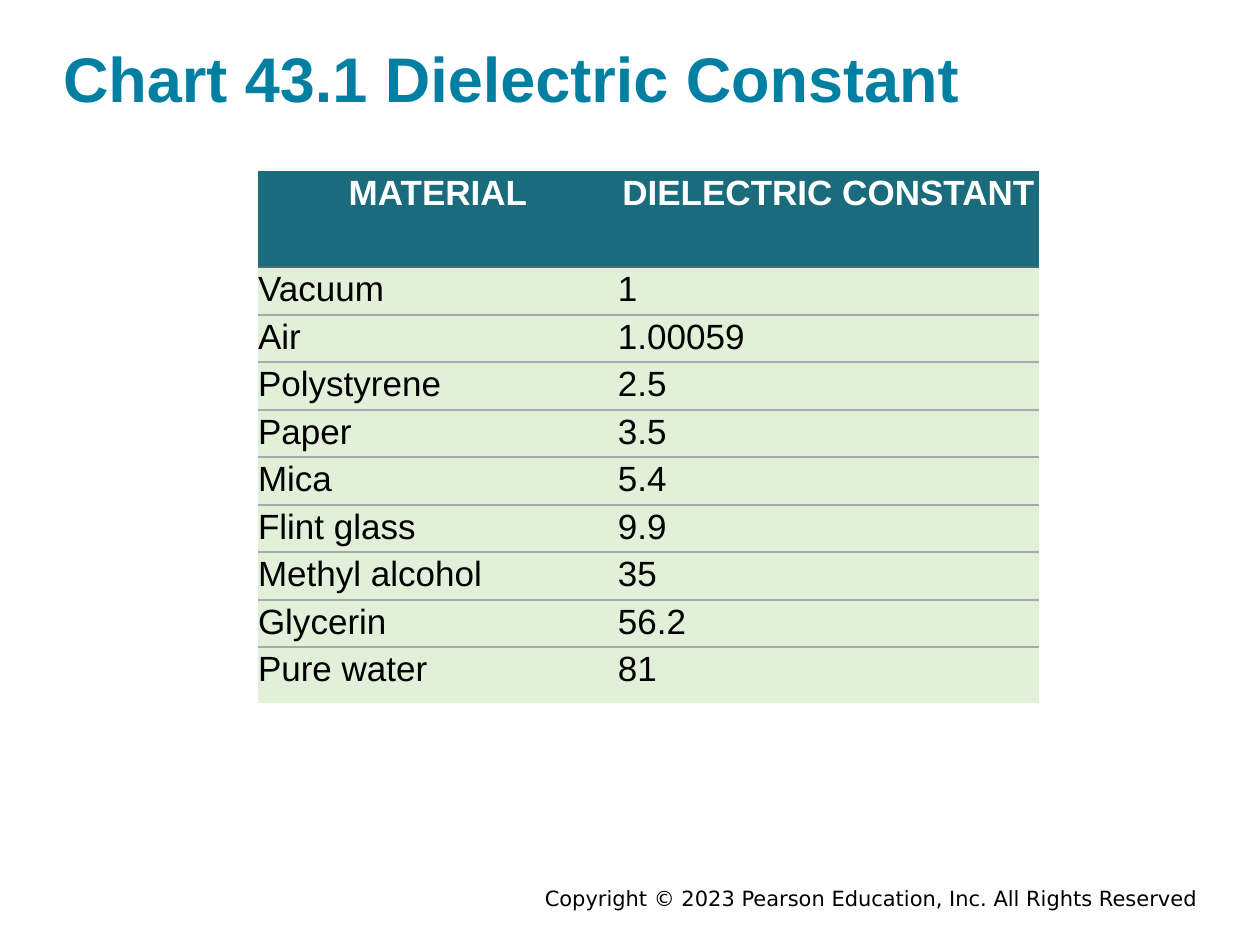
"""Build the slide with a table of dielectric constants."""
from lxml import etree
from pptx import Presentation
from pptx import util as u
from pptx.dml.color import RGBColor
from pptx.enum import text
from pptx.oxml import ns

COLORS = {"title": "007FA3", "head": "1A6C7C", "body": "E2EFD9", "white": "FFFFFF",
          "black": "000000", "head_rule": "4F6B79", "rule": "A7A9AC"}
ROWS = [("MATERIAL", "DIELECTRIC CONSTANT"), ("Vacuum", "1"), ("Air", "1.00059"),
        ("Polystyrene", "2.5"), ("Paper", "3.5"), ("Mica", "5.4"), ("Flint glass", "9.9"),
        ("Methyl alcohol", "35"), ("Glycerin", "56.2"), ("Pure water", "81")]
COLS = [360, 421]
HEIGHTS = [96] + [48, 47] * 4 + [56]
NO_GRID = "{2D5ABB26-0587-4C30-8999-92F81FD0307C}"
PX = 914400 / 126


def px(*values):
    return [u.Emu(round(v * PX)) for v in values]


def style(p, size, color, name="Arial", bold=False):
    for r in p.runs:
        r.font.size, r.font.name, r.font.bold = u.Pt(size), name, bold
        r.font.color.rgb = RGBColor.from_string(COLORS[color])


prs = Presentation()
prs.slide_width, prs.slide_height = px(1260, 945)
s = prs.slides.add_slide(prs.slide_layouts[5])

sp = s.shapes.title
sp.left, sp.top, sp.width, sp.height = px(63, 32, 1134, 89)
tf = sp.text_frame
tf.text = "Chart 43.1 Dielectric Constant"
tf.margin_left = tf.margin_right = 0
tf.vertical_anchor = text.MSO_ANCHOR.BOTTOM
tf.paragraphs[0].alignment = text.PP_ALIGN.LEFT
style(tf.paragraphs[0], 36, "title", bold=True)

sp = s.shapes.add_textbox(*px(223, 879, 987, 38))
tf = sp.text_frame
tf.word_wrap = True
tf.text = "Copyright © 2023 Pearson Education, Inc. All Rights Reserved"
tf.paragraphs[0].alignment = text.PP_ALIGN.RIGHT
style(tf.paragraphs[0], 12, "black", "DejaVu Sans")

frame = s.shapes.add_table(len(ROWS), len(COLS), *px(258, 171, sum(COLS), sum(HEIGHTS)))
table = frame.table
table.horz_banding = False
table._tbl.tblPr.find(ns.qn("a:tableStyleId")).text = NO_GRID
for col, width in zip(table.columns, px(*COLS)):
    col.width = width
for row, height in zip(table.rows, px(*HEIGHTS)):
    row.height = height

for i, values in enumerate(ROWS):
    head = i == 0
    edges = {}
    if i > 0:
        edges["lnT"] = "head_rule" if i == 1 else "rule"
    if i < len(ROWS) - 1:
        edges["lnB"] = "head_rule" if head else "rule"
    for j, value in enumerate(values):
        cell = table.cell(i, j)
        cell.margin_left = cell.margin_right = cell.margin_top = cell.margin_bottom = 0
        cell.fill.solid()
        cell.fill.fore_color.rgb = RGBColor.from_string(COLORS["head" if head else "body"])
        for k, (tag, color) in enumerate(edges.items()):
            ln = etree.Element(ns.qn(f"a:{tag}"), w=str(u.Pt(1)))
            fill = etree.SubElement(ln, ns.qn("a:solidFill"))
            etree.SubElement(fill, ns.qn("a:srgbClr"), val=COLORS[color])
            cell._tc.tcPr.insert(k, ln)
        cell.text_frame.text = value
        p = cell.text_frame.paragraphs[0]
        p.alignment = text.PP_ALIGN.CENTER if head else text.PP_ALIGN.LEFT
        p.line_spacing, p.space_after = 1.07, u.Pt(8)
        style(p, 20, "white" if head else "black", bold=head)

prs.save("out.pptx")
